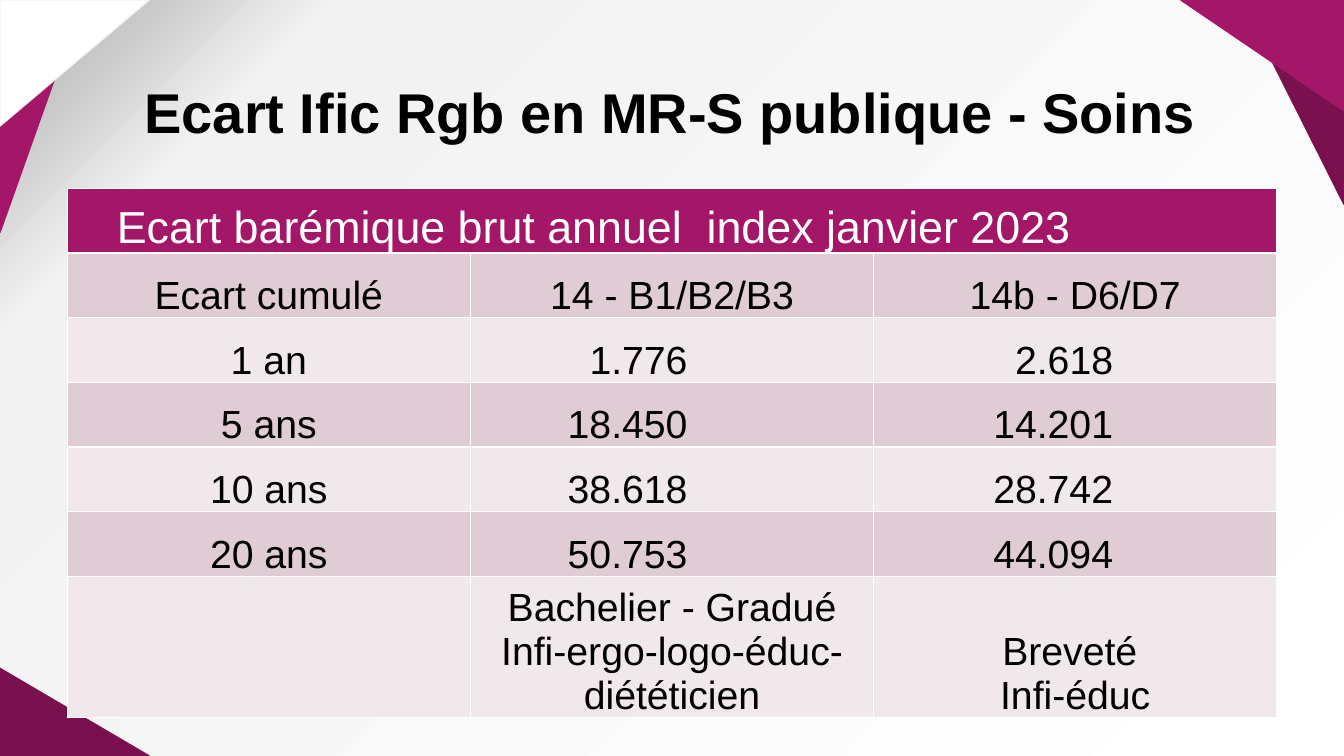
from copy import deepcopy
from dataclasses import dataclass

from pptx import Presentation
from pptx.dml.color import RGBColor
from pptx.enum.shapes import MSO_SHAPE as Shape
from pptx.enum.text import MSO_ANCHOR as Anchor, PP_ALIGN as Align
from pptx.util import Pt


@dataclass(frozen=True)
class Theme:
    font: str = "Arial"
    title_size: int = 40
    header_size: int = 32
    body_size: int = 28
    black: str = "000000"
    white: str = "FFFFFF"
    magenta: str = "A31668"
    plum: str = "7A114E"
    edge: str = "F2F2F2"
    dark_band: str = "E0CCD4"
    light_band: str = "F0E8EB"
    backdrop: tuple = ((0, "A6A6A6"), (0.16, "F2F2F2"), (1, "FFFFFF"))


THEME = Theme()
WIDTH, HEIGHT = 960, 540
TITLE = "Ecart Ific Rgb en MR-S publique - Soins"
HEADER = "Ecart barémique brut annuel  index janvier 2023"
ROWS = [
    ("Ecart cumulé", "14 - B1/B2/B3", "14b - D6/D7"),
    ("1 an", "1.776", "2.618"),
    ("5 ans", "18.450", "14.201"),
    ("10 ans", "38.618", "28.742"),
    ("20 ans", "50.753", "44.094"),
    ("", "Bachelier - Gradué\nInfi-ergo-logo-éduc-diététicien", "Breveté \nInfi-éduc"),
]
FIGURE_ROWS = range(2, 6)
FIGURE_MARGINS = {1: 133, 2: 117}
HEADER_MARGIN = 111
ROW_HEIGHT, LAST_ROW_HEIGHT = 46.2, 93.6

# Corner, width, height, fill, line; from back to front
CORNERS = [
    ("top left", 59, 166, THEME.magenta, THEME.magenta),
    ("bottom left", 106.6, 62.6, THEME.plum, THEME.plum),
    ("top left", 106.6, 90, THEME.white, THEME.edge),
    ("top right", 73.4, 146, THEME.plum, THEME.plum),
    ("top right", 116.6, 79.2, THEME.magenta, THEME.magenta),
]
ROTATIONS = {"bottom left": 0, "top left": 90, "top right": 180}


def color(code):
    return RGBColor.from_string(code)


def style_text(frame, size, code, align, bold=False):
    for para in frame.paragraphs:
        para.alignment = align
        for span in para.runs:
            span.font.name = THEME.font
            span.font.size = Pt(size)
            span.font.bold = bold
            span.font.color.rgb = color(code)


def paint_background(page):
    fill = page.background.fill
    fill.gradient()
    fill.gradient_angle = 315
    first_stop = page.background._cSld.find(".//{*}gs")
    first_stop.addnext(deepcopy(first_stop))
    for stop, (position, code) in zip(fill.gradient_stops, THEME.backdrop):
        stop.position = position
        stop.color.rgb = color(code)


def add_corner(page, corner, width, height, fill, line):
    """Fit a right triangle, turned as its corner needs, into that slide corner."""
    rotation = ROTATIONS[corner]
    center_x = WIDTH - width / 2 if "right" in corner else width / 2
    center_y = HEIGHT - height / 2 if "bottom" in corner else height / 2
    if rotation == 90:
        width, height = height, width
    triangle = page.shapes.add_shape(
        Shape.RIGHT_TRIANGLE, Pt(center_x - width / 2), Pt(center_y - height / 2),
        Pt(width), Pt(height))
    triangle.rotation = rotation
    triangle.shadow.inherit = False
    triangle.fill.solid()
    triangle.fill.fore_color.rgb = color(fill)
    triangle.line.color.rgb = color(line)
    triangle.line.width = Pt(1)


def add_title(page, left, top, width, height):
    box = page.shapes.add_textbox(Pt(left), Pt(top), Pt(width), Pt(height))
    frame = box.text_frame
    frame.word_wrap = True
    frame.vertical_anchor = Anchor.MIDDLE
    frame.text = TITLE
    frame.paragraphs[0].line_spacing = 0.9
    style_text(frame, THEME.title_size, THEME.black, Align.CENTER, bold=True)


def fill_cell(cell, text, fill, size, code, align=Align.CENTER, right_margin=0):
    cell.fill.solid()
    cell.fill.fore_color.rgb = color(fill)
    cell.margin_left = cell.margin_top = cell.margin_bottom = 0
    cell.margin_right = Pt(right_margin)
    cell.vertical_anchor = Anchor.BOTTOM
    cell.text_frame.text = text
    style_text(cell.text_frame, size, code, align)


def add_pay_table(page, left, top, width):
    row_count = len(ROWS) + 1
    height = ROW_HEIGHT * len(ROWS) + LAST_ROW_HEIGHT
    table = page.shapes.add_table(
        row_count, 3, Pt(left), Pt(top), Pt(width), Pt(height)).table
    for column in table.columns:
        column.width = Pt(width / 3)
    for row in table.rows:
        row.height = Pt(ROW_HEIGHT)
    table.rows[row_count - 1].height = Pt(LAST_ROW_HEIGHT)

    table.cell(0, 0).merge(table.cell(0, 2))
    fill_cell(table.cell(0, 0), HEADER, THEME.magenta, THEME.header_size,
              THEME.white, right_margin=HEADER_MARGIN)
    for row, texts in enumerate(ROWS, start=1):
        band = THEME.dark_band if row % 2 else THEME.light_band
        for column, text in enumerate(texts):
            is_figure = row in FIGURE_ROWS and column in FIGURE_MARGINS
            fill_cell(table.cell(row, column), text, band, THEME.body_size, THEME.black,
                      Align.RIGHT if is_figure else Align.CENTER,
                      FIGURE_MARGINS[column] if is_figure else 0)


def main():
    deck = Presentation()
    deck.slide_width, deck.slide_height = Pt(WIDTH), Pt(HEIGHT)
    page = deck.slides.add_slide(deck.slide_layouts[6])
    paint_background(page)
    for corner in CORNERS:
        add_corner(page, *corner)
    add_title(page, 72.7, 30.2, 811.4, 104.4)
    add_pay_table(page, 48, 134.6, 864)
    deck.save("out.pptx")


if __name__ == "__main__":
    main()
